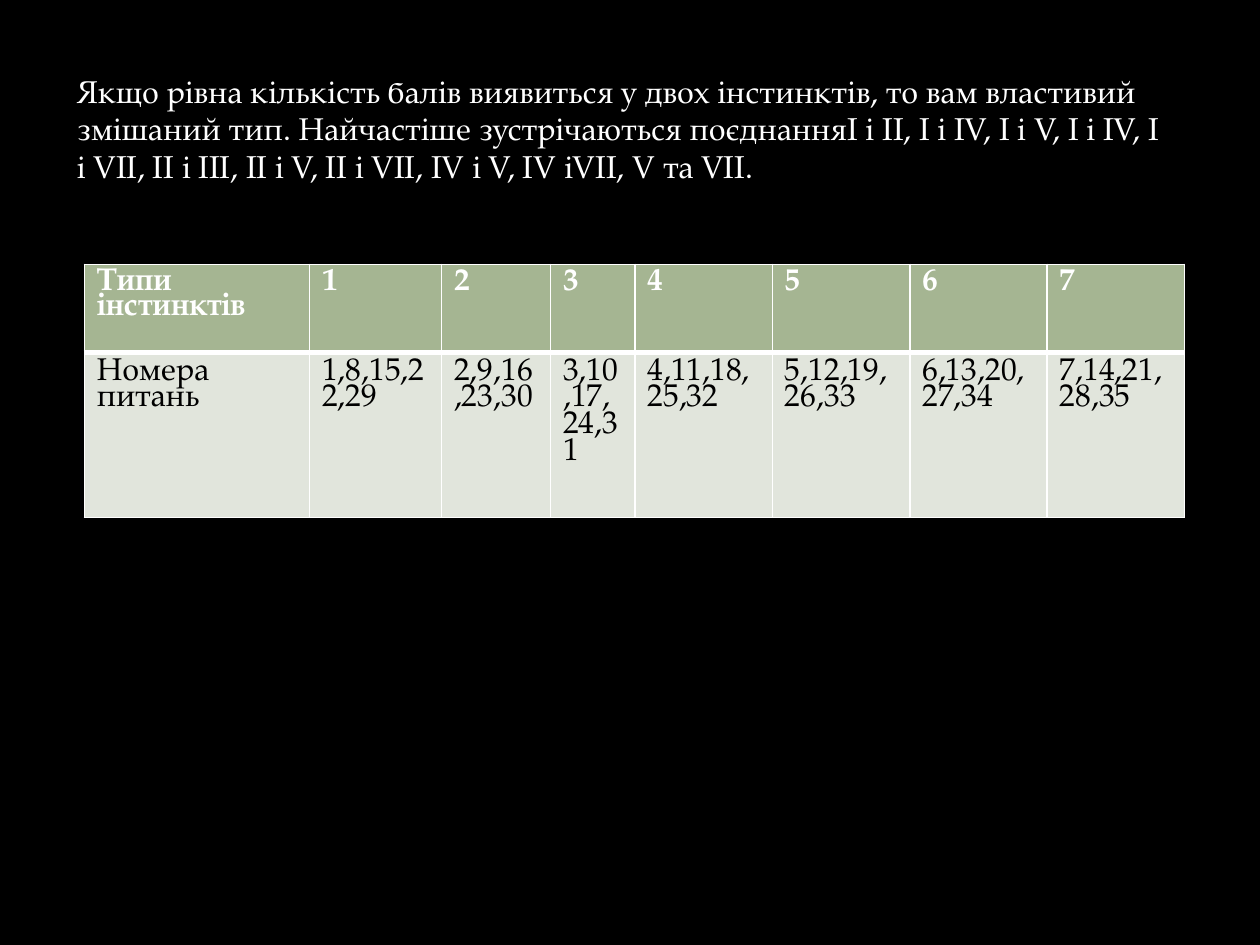
"""Build the slide with the key to the instinct types."""
from lxml.etree import SubElement
from pptx import Presentation
from pptx.dml.color import RGBColor as RGB
from pptx.enum.text import MSO_AUTO_SIZE as AutoSize
from pptx.oxml.ns import qn
from pptx.util import Cm, Pt

FONT = "TeX Gyre Pagella"
COLORS = {"back": "000000", "light": "FFFFFF", "dark": "000000",
          "head": "A5B592", "body": "E1E5DC"}
INTRO = ("Якщо рівна кількість балів виявиться у двох інстинктів, то вам властивий "
         "змішаний тип. Найчастіше зустрічаються поєднанняI і II, I і IV, I і V, "
         "I і IV, I і VII, II і III, II і V, II і VII, IV і V, IV іVII, V та VII.")
TYPES = range(1, 8)
ROWS = [
    ["Типи інстинктів"] + [str(n) for n in TYPES],
    ["Номера питань"] + [",".join(str(n + 7 * k) for k in range(5)) for n in TYPES],
]
COL_WIDTHS = [4.54, 2.66, 2.2, 1.7] + [2.77] * 4
ROW_HEIGHTS = [1.78, 3.32]


def add_run(p, text, color, bold=False):
    r = p.add_run()
    r.text = text
    r.font.name = FONT
    r.font.size = Pt(18)
    r.font.bold = bold
    r.font.color.rgb = RGB.from_string(COLORS[color])


def add_text(s, text, left, top, width, height):
    sp = s.shapes.add_textbox(Cm(left), Cm(top), Cm(width), Cm(height))
    tf = sp.text_frame
    tf.word_wrap = True
    tf.auto_size = AutoSize.SHAPE_TO_FIT_TEXT
    add_run(tf.paragraphs[0], text, "light")


def set_borders(cell, widths):
    tc_pr = cell._tc.get_or_add_tcPr()
    for i, (side, width) in enumerate(widths.items()):
        ln = SubElement(tc_pr, qn(f"a:ln{side}"), w=str(Pt(width)))
        fill = SubElement(ln, qn("a:solidFill"))
        SubElement(fill, qn("a:srgbClr"), val=COLORS["light"])
        tc_pr.remove(ln)
        tc_pr.insert(i, ln)


def fill_cell(cell, text, is_head):
    cell.fill.solid()
    cell.fill.fore_color.rgb = RGB.from_string(COLORS["head" if is_head else "body"])
    set_borders(cell, {"L": 1, "R": 1, "T": 1 if is_head else 3,
                       "B": 3 if is_head else 1})
    p = cell.text_frame.paragraphs[0]
    p.line_spacing = 0.8 if is_head else 0.84
    add_run(p, text, "light" if is_head else "dark", is_head)


def add_grid(s, left, top):
    frame = s.shapes.add_table(len(ROWS), len(COL_WIDTHS), Cm(left), Cm(top),
                               Cm(sum(COL_WIDTHS)), Cm(sum(ROW_HEIGHTS)))
    table = frame.table
    table.horz_banding = False
    for col, width in zip(table.columns, COL_WIDTHS):
        col.width = Cm(width)
    for i, (row, height) in enumerate(zip(table.rows, ROW_HEIGHTS)):
        row.height = Cm(height)
        for cell, text in zip(row.cells, ROWS[i]):
            fill_cell(cell, text, i == 0)


def main():
    prs = Presentation()
    prs.slide_width, prs.slide_height = Cm(25.4), Cm(19.05)
    s = prs.slides.add_slide(prs.slide_layouts[6])
    s.background.fill.solid()
    s.background.fill.fore_color.rgb = RGB.from_string(COLORS["back"])
    add_text(s, INTRO, 1.3, 1.32, 22.6, 2.57)
    add_grid(s, 1.7, 5.33)
    prs.save("out.pptx")


main()
